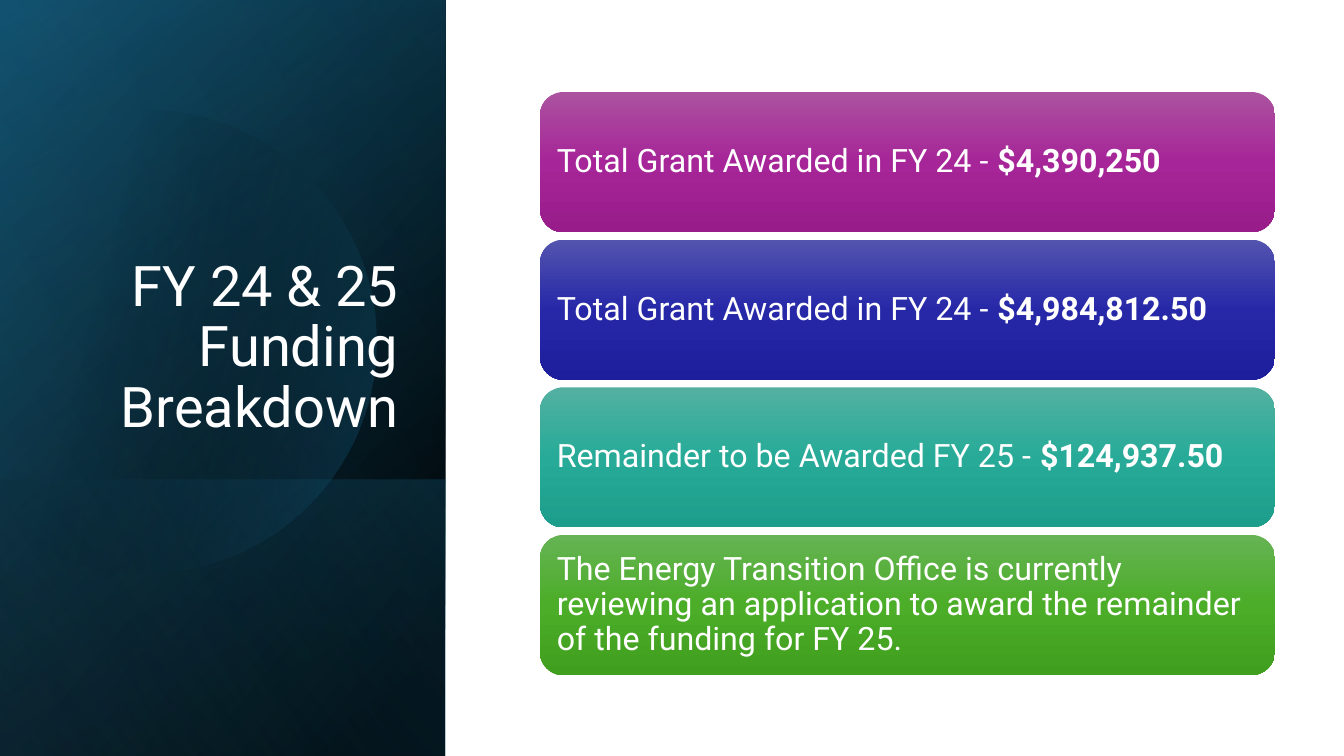
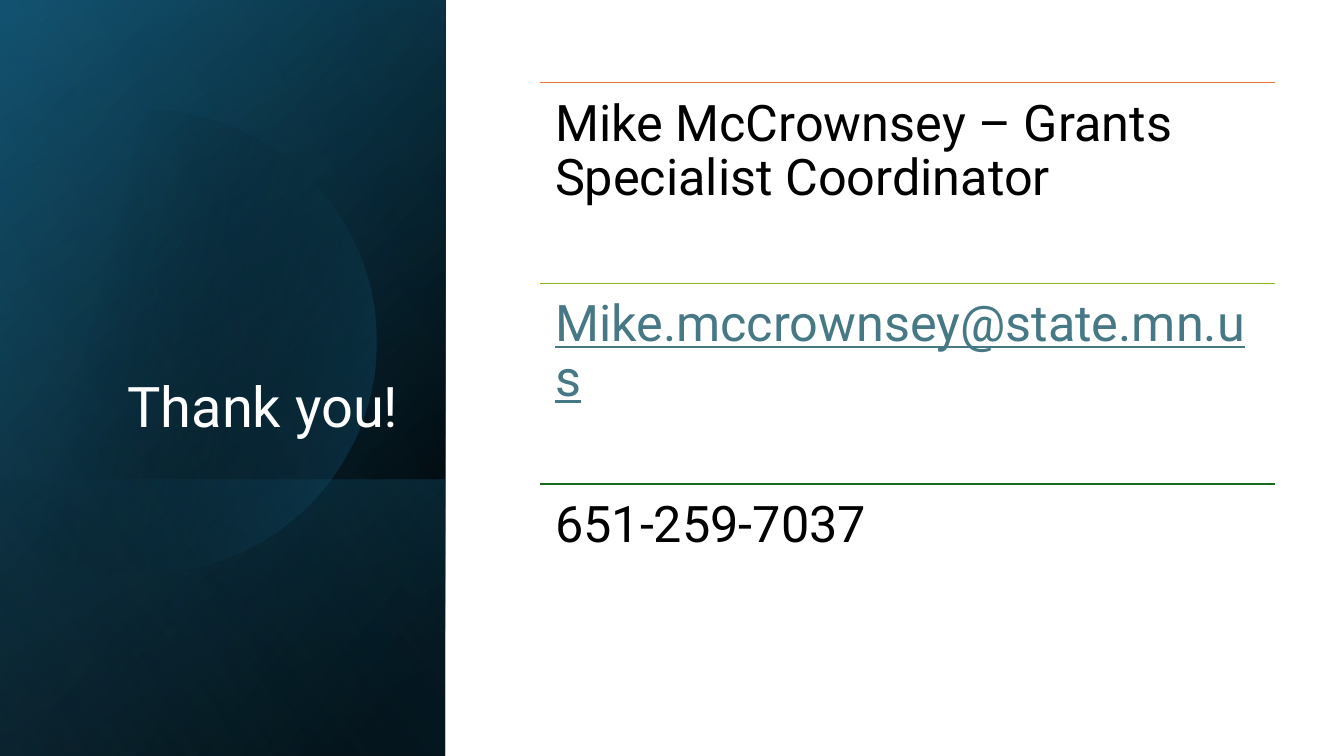
from math import cos, radians, sin

from lxml.etree import SubElement
from pptx import Presentation
from pptx.dml.color import RGBColor
from pptx.enum.shapes import MSO_CONNECTOR, MSO_SHAPE
from pptx.enum.text import MSO_ANCHOR, PP_ALIGN
from pptx.oxml.ns import qn
from pptx.util import Cm, Pt

PANEL_WIDTH, PANEL_HEIGHT = 11.22, 19.05
LOWER_TOP = 12.09
CONTENT_LEFT, CONTENT_WIDTH = 13.61, 18.52
CARD_TOP, CARD_HEIGHT, CARD_PITCH = 2.32, 3.53, 3.72
CONTACT_TOP, CONTACT_PITCH = 2.08, 5.06

FUNDING = [
    ("Total Grant Awarded in FY 24 - ", "$4,390,250", ("AC53A0", "A62598", "991C8B")),
    ("Total Grant Awarded in FY 24 - ", "$4,984,812.50", ("5354AE", "2628A8", "1D1E9B")),
    ("Remainder to be Awarded FY 25 - ", "$124,937.50", ("53B0A1", "27AB98", "1D9D8B")),
    ("The Energy Transition Office is currently reviewing an application "
     "to award the remainder of the funding for FY 25.", "", ("66B354", "4BAD28", "409F1E")),
]
CONTACTS = [
    ("Mike McCrownsey – Grants Specialist Coordinator", "E97132", "000000", False),
    ("Mike.mccrownsey@state.mn.us", "8EB21E", "467886", True),
    ("651-259-7037", "196B24", "000000", False),
]


def rgb(value):
    return RGBColor.from_string(value)


class Deck:
    font = "Roboto"
    white = "FFFFFF"

    def __init__(self):
        self.presentation = Presentation()
        self.presentation.slide_width = Cm(33.87)
        self.presentation.slide_height = Cm(PANEL_HEIGHT)
        self.slide = None

    def start_slide(self, title):
        self.slide = self.presentation.slides.add_slide(self.presentation.slide_layouts[6])
        self.panel()
        self.text_box(1.63, 4.67, 8.66, 6.65, title, 40, self.white,
                      inset=0.25, anchor=MSO_ANCHOR.BOTTOM, align=PP_ALIGN.RIGHT)

    def gradient(self, shape, angle, stops):
        shape.shadow.inherit = False
        shape.line.fill.background()
        shape.fill.gradient()
        grad = shape._element.spPr.find(qn("a:gradFill"))
        stop_list = grad.find(qn("a:gsLst"))
        for old_stop in list(stop_list):
            stop_list.remove(old_stop)
        for position, color, opacity in stops:
            stop = SubElement(stop_list, qn("a:gs"), pos=str(position * 1000))
            tint = SubElement(stop, qn("a:srgbClr"), val=color)
            if opacity < 100:
                SubElement(tint, qn("a:alpha"), val=str(opacity * 1000))
        shape.fill.gradient_angle = 360 - angle

    def block(self, left, top, width, height, angle, stops, kind=MSO_SHAPE.RECTANGLE):
        shape = self.slide.shapes.add_shape(kind, Cm(left), Cm(top), Cm(width), Cm(height))
        self.gradient(shape, angle, stops)
        return shape

    def disc(self, center_x, center_y, radius, half_sweep, angle, stops):
        points = [(Cm(center_x + radius * cos(radians(step))),
                   Cm(center_y + radius * sin(radians(step))))
                  for step in range(-half_sweep, half_sweep + 1, 2)]
        outline = self.slide.shapes.build_freeform(*points[0])
        outline.add_line_segments(points[1:], close=True)
        self.gradient(outline.convert_to_shape(), angle, stops)

    def panel(self):
        whole = (0, 0, PANEL_WIDTH, PANEL_HEIGHT)
        self.block(*whole, 220, [(8, "000000", 100), (100, "104862", 100)])
        self.block(*whole, 240, [(0, "000000", 0), (99, "156082", 46)])
        self.block(0, LOWER_TOP, PANEL_WIDTH, PANEL_HEIGHT - LOWER_TOP, 140,
                   [(2, "156082", 29), (100, "000000", 30)])
        self.disc(3.63, 8.6, 5.85, 128, 14, [(29, "000000", 0), (100, "156082", 43)])
        self.block(*whole, 150, [(0, "000000", 0), (99, "46B1E1", 11)])

    def set_frame(self, shape, inset, anchor, align):
        frame = shape.text_frame
        frame.word_wrap = True
        frame.vertical_anchor = anchor
        frame.margin_left = frame.margin_right = Cm(inset)
        frame.margin_top = frame.margin_bottom = Cm(inset)
        paragraph = frame.paragraphs[0]
        paragraph.alignment = align
        paragraph.line_spacing = 0.9
        return paragraph

    def add_run(self, paragraph, text, size, color, bold=False, underline=False):
        run = paragraph.add_run()
        run.text = text
        run.font.name = self.font
        run.font.size = Pt(size)
        run.font.color.rgb = rgb(color)
        run.font.bold = bold
        run.font.underline = underline

    def text_box(self, left, top, width, height, text, size, color, inset,
                 anchor=MSO_ANCHOR.TOP, align=PP_ALIGN.LEFT, underline=False):
        box = self.slide.shapes.add_textbox(Cm(left), Cm(top), Cm(width), Cm(height))
        paragraph = self.set_frame(box, inset, anchor, align)
        self.add_run(paragraph, text, size, color, underline=underline)

    def card(self, top, label, amount, colors):
        stops = [(position, color, 100) for position, color in zip((0, 50, 100), colors)]
        card = self.block(CONTENT_LEFT, top, CONTENT_WIDTH, CARD_HEIGHT, 90, stops,
                          MSO_SHAPE.ROUNDED_RECTANGLE)
        paragraph = self.set_frame(card, 0.25, MSO_ANCHOR.MIDDLE, PP_ALIGN.LEFT)
        self.add_run(paragraph, label, 23, self.white)
        if amount:
            self.add_run(paragraph, amount, 23, self.white, bold=True)

    def rule(self, top, color):
        rule = self.slide.shapes.add_connector(
            MSO_CONNECTOR.STRAIGHT, Cm(CONTENT_LEFT), Cm(top),
            Cm(CONTENT_LEFT + CONTENT_WIDTH), Cm(top))
        rule.line.color.rgb = rgb(color)
        rule.line.width = Pt(1)
        SubElement(rule._element.spPr, qn("a:effectLst"))

    def contact(self, top, text, rule_color, text_color, underline):
        self.rule(top, rule_color)
        self.text_box(CONTENT_LEFT, top, CONTENT_WIDTH, CONTACT_PITCH, text, 36,
                      text_color, inset=0.38, underline=underline)


def main():
    deck = Deck()
    deck.start_slide("FY 24 & 25 Funding Breakdown")
    for index, funding in enumerate(FUNDING):
        deck.card(CARD_TOP + index * CARD_PITCH, *funding)
    deck.start_slide("Thank you!")
    for index, contact in enumerate(CONTACTS):
        deck.contact(CONTACT_TOP + index * CONTACT_PITCH, *contact)
    deck.presentation.save("out.pptx")


if __name__ == "__main__":
    main()
